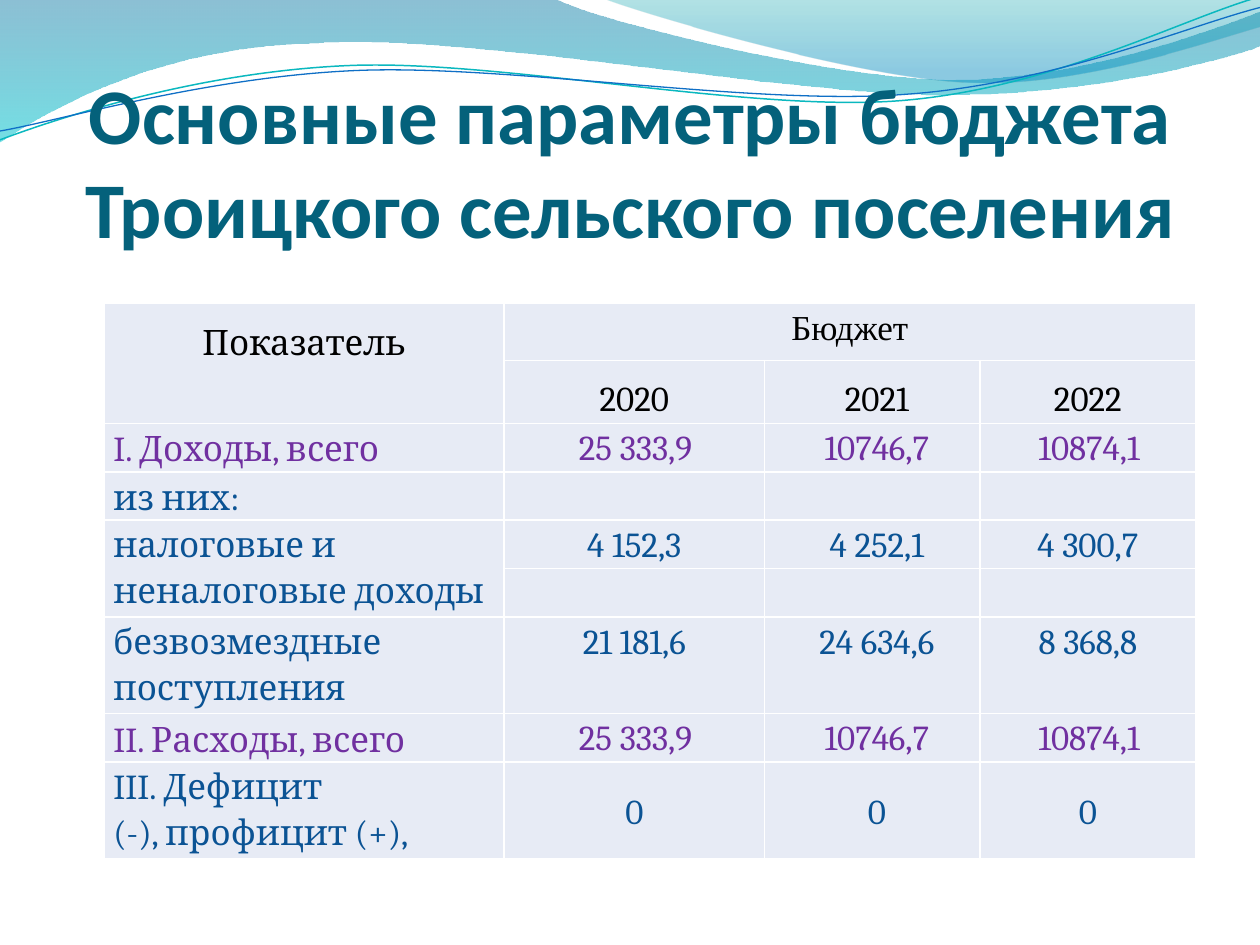
import math
from lxml import etree
from pptx import Presentation, util as u
from pptx.dml.color import RGBColor
from pptx.enum import text
from pptx.oxml.ns import qn

WHITE = RGBColor(0xFF, 0xFF, 0xFF)
BLACK = RGBColor(0, 0, 0)
TITLE = RGBColor(0x04, 0x61, 0x7B)
PURPLE = RGBColor(0x70, 0x30, 0xA0)
BLUE = RGBColor(0x0B, 0x53, 0x94)
CELL = RGBColor(0xE7, 0xEB, 0xF5)
DEEP_BLUE = RGBColor(0x00, 0x74, 0xA1)
AQUA = RGBColor(0x00, 0xC6, 0xCF)
TEAL = RGBColor(0x00, 0xA1, 0xA9)
SKY = RGBColor(0x00, 0x8B, 0xBF)
TEAL_LINE = RGBColor(0x0A, 0xB8, 0xBF)
BLUE_LINE = RGBColor(0x0F, 0x6F, 0xC6)

prs = Presentation()
prs.slide_width, prs.slide_height = u.Inches(10), u.Inches(7.5)
UNIT = prs.slide_width // 10  # the slide is a grid of 10 columns by 7.5 rows
s = prs.slides.add_slide(prs.slide_layouts[6])


def add_curve(start, segments, close):
    """Draw segments of two numbers (straight) or six (cubic Bezier)."""
    points = [seg[k:k + 2] for seg in segments for k in range(0, len(seg), 2)]
    builder = s.shapes.build_freeform(start[0] * UNIT, start[1] * UNIT, scale=1.0)
    builder.add_line_segments([(x * UNIT, y * UNIT) for x, y in points], close=close)
    sp = builder.convert_to_shape()
    sp.shadow.inherit = False
    lines = iter(list(sp._element.spPr.iter(qn("a:lnTo"))))
    for seg in segments:
        first = next(lines)
        if len(seg) == 6:
            curve = etree.Element(qn("a:cubicBezTo"))
            first.addprevious(curve)
            for line in (first, next(lines), next(lines)):
                curve.append(line[0])
                line.getparent().remove(line)
    return sp


def turn(points, center, degrees):
    """Turn a flat x, y, x, y... sequence clockwise about center."""
    (cx, cy), a = center, math.radians(degrees)
    flat = []
    for x, y in zip(points[::2], points[1::2]):
        dx, dy = x - cx, y - cy
        flat += [cx + dx * math.cos(a) - dy * math.sin(a),
                 cy + dx * math.sin(a) + dy * math.cos(a)]
    return flat


# Waves: start, segments, gradient stops as (position, colour, opacity %)
waves = [
    ((0, 0),
     [(4.4, -0.01), (4.76, 0.17, 6.64, 0.63, 7.58, 0.63),
      (8.53, 0.63, 9.58, 0.26, 10, 0.09), (10.01, 0.36),
      (9.83, 0.44, 8.7, 0.76, 7.46, 0.75), (6.22, 0.75, 3.82, 0.28, 2.57, 0.34),
      (1.29, 0.36, 0.46, 0.83, -0.01, 1.13)],
     [(0, DEEP_BLUE, 45), (1, AQUA, 55)]),
    ((4.79, -0.01),
     [(5.09, 0.11, 6.82, 0.62, 7.69, 0.65), (8.56, 0.69, 9.61, 0.32, 10, 0.21),
      (10, 0), (4.79, -0.01)],
     [(0, TEAL, 30), (0.8, SKY, 45)]),
]
for start, segments, stops in waves:
    sp = add_curve(start, segments, True)
    sp.line.fill.background()
    sp.fill.gradient()
    sp.fill.gradient_angle = 270
    for stop, (position, color, _) in zip(sp.fill.gradient_stops, stops):
        stop.position, stop.color.rgb = position, color
    for clr, (_, _, opacity) in zip(sp._element.spPr.iter(qn("a:srgbClr")), stops):
        etree.SubElement(clr, qn("a:alpha"), val=str(opacity * 1000))

# Thin lines, tilted about their centres
TILT = 2.7
wave_lines = [
    ((0, 1.11),
     [(0.48, 0.93, 1.58, 0.57, 2.77, 0.52), (3.95, 0.47, 5.93, 0.89, 7.13, 0.8),
      (8.33, 0.71, 9.38, 0.15, 9.98, -0.02)], (4.99, 0.57), TEAL_LINE, 0.85),
    ((0, 1.04),
     [(0.47, 0.96, 1.64, 0.61, 2.83, 0.56), (4.03, 0.51, 5.97, 0.84, 7.17, 0.75),
      (8.36, 0.67, 9.41, 0.21, 10, 0.06)], (5, 0.59), BLUE_LINE, 0.75),
]
for start, segments, center, color, width in wave_lines:
    sp = add_curve(turn(start, center, TILT),
                   [turn(seg, center, TILT) for seg in segments], False)
    sp.rotation = 360 - TILT
    sp.fill.background()
    sp.line.color.rgb, sp.line.width = color, u.Pt(width)

# Title
box = [int(v * UNIT) for v in (0.5, 0.77, 9, 1.25)]
tf = s.shapes.add_textbox(*box).text_frame
for name, value in dict(word_wrap=True, vertical_anchor=text.MSO_ANCHOR.BOTTOM,
                        margin_left=0, margin_right=0, margin_bottom=0).items():
    setattr(tf, name, value)
p = tf.paragraphs[0]
p.alignment = text.PP_ALIGN.CENTER
r = p.add_run()
r.text = "Основные параметры бюджета Троицкого сельского поселения"
r.font.name, r.font.size, r.font.bold = "Calibri", u.Pt(45), True
r.font.color.rgb = TITLE

# Budget table: texts, colour, first-line indents of the row
col_widths = [3.17, 2.07, 1.71, 1.71]
row_heights = [0.45, 0.38, 0.31, 0.31, 0.31, 0.33, 0.64, 0.31, 0.64]
TOTAL, PART, PLAIN = (0, 0.02, 0.07, 0.02), (0, -0.07, 0.07, -0.07), (0, 0, 0.07, 0)
EMPTY = ["", "", ""]
rows = [
    (["Показатель", "Бюджет", "", ""], BLACK, (-0.07, 0, 0, 0)),
    (["", "2020", "2021", "2022"], BLACK, PLAIN),
    (["I. Доходы, всего", "25 333,9", "10746,7", "10874,1"], PURPLE, TOTAL),
    (["из них:"] + EMPTY, BLUE, PLAIN),
    (["налоговые и неналоговые доходы", "4 152,3", "4 252,1", "4 300,7"], BLUE, PART),
    ([""] + EMPTY, BLUE, PLAIN),
    (["безвозмездные поступления", "21 181,6", "24 634,6", "8 368,8"], BLUE, PART),
    (["II. Расходы, всего", "25 333,9", "10746,7", "10874,1"], PURPLE, TOTAL),
    (["III. Дефицит\n(-), профицит (+),", "0", "0", "0"], BLUE, PLAIN),
]
box = [int(v * UNIT) for v in (0.83, 2.41, sum(col_widths), 4.2)]
frame = s.shapes.add_table(len(rows), len(col_widths), *box)
table = frame.table
table.first_row = table.horz_banding = False
for col, width in zip(table.columns, col_widths):
    col.width = int(width * UNIT)
for row, height in zip(table.rows, row_heights):
    row.height = int(height * UNIT)
frame.height = box[3]
for first, last in [((0, 0), (1, 0)), ((0, 1), (0, 3)), ((4, 0), (5, 0))]:
    table.cell(*first).merge(table.cell(*last))

for i, (texts, color, indents) in enumerate(rows):
    for j, (content, indent) in enumerate(zip(texts, indents)):
        cell = table.cell(i, j)
        middle = (i in (2, 3, 7) and j == 0) or (i == 8 and j > 0)
        for name, value in dict(
                margin_left=u.Inches(0.07), margin_right=u.Inches(0.07),
                margin_top=0, margin_bottom=0,
                vertical_anchor=text.MSO_ANCHOR.MIDDLE if middle
                else text.MSO_ANCHOR.TOP).items():
            setattr(cell, name, value)
        cell.fill.solid()
        cell.fill.fore_color.rgb = CELL
        for k, side in enumerate(("lnL", "lnR", "lnT", "lnB")):
            ln = etree.Element(qn("a:" + side), w=str(u.Pt(1)))
            fill = etree.SubElement(ln, qn("a:solidFill"))
            etree.SubElement(fill, qn("a:srgbClr"), val=str(WHITE))
            cell._tc.tcPr.insert(k, ln)
        cell.text_frame.text = content
        for p in cell.text_frame.paragraphs:
            centred = j > 0 or i == 0
            p.alignment = text.PP_ALIGN.CENTER if centred else text.PP_ALIGN.LEFT
            p.line_spacing = 1.5 if i == 1 or (i, j) == (0, 0) else 1.15
            if not content:
                end = etree.SubElement(p._p, qn("a:endParaRPr"), sz="2000")
                etree.SubElement(end, qn("a:latin"), typeface="Cambria")
                continue
            if indent:
                pPr = p._p.get_or_add_pPr()
                pPr.set("marL", "0")
                pPr.set("indent", str(int(indent * UNIT)))
            font = p.runs[0].font
            font.name = "Times New Roman" if (i, j) == (0, 1) else "Cambria"
            font.size = u.Pt(20)
            font.color.rgb = color

prs.save("out.pptx")
